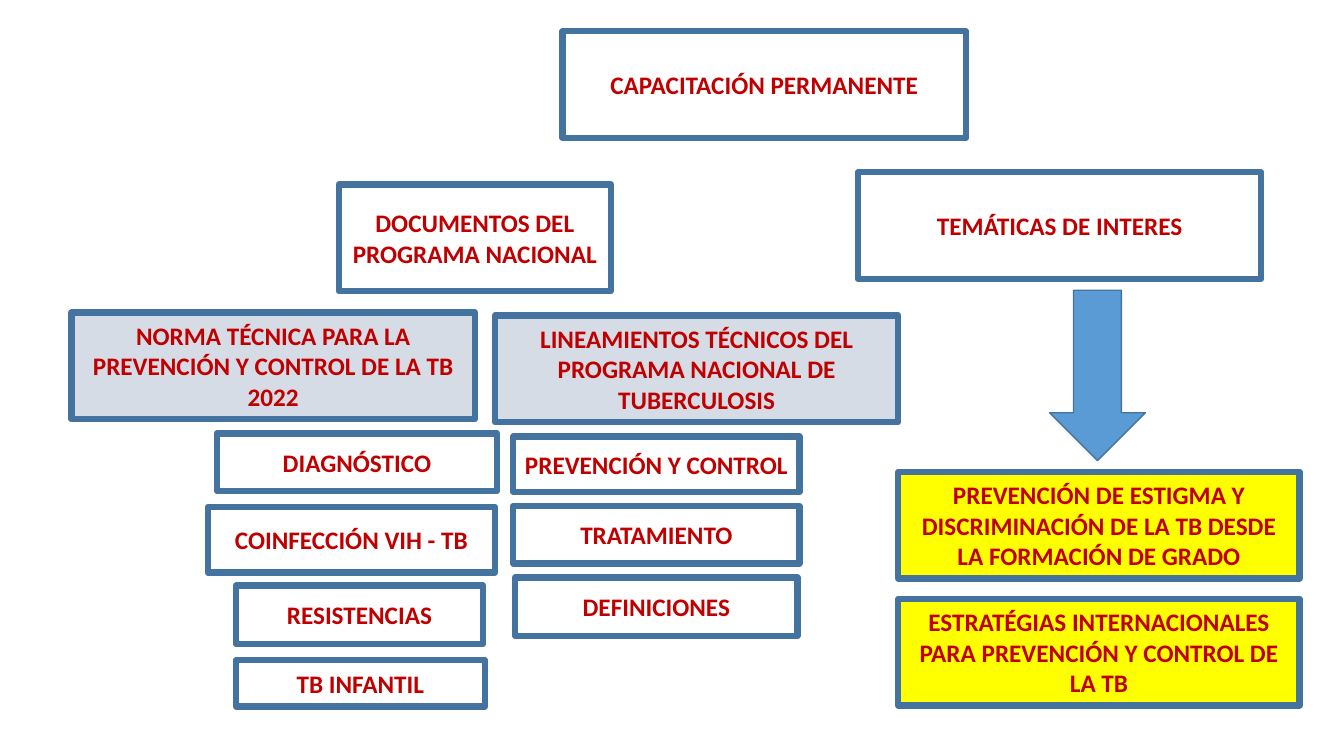
from pptx import Presentation
from pptx.dml.color import RGBColor
from pptx.enum.shapes import MSO_SHAPE
from pptx.enum.text import MSO_ANCHOR, MSO_AUTO_SIZE, PP_ALIGN
from pptx.util import Inches, Pt

BORDER = "43739E"
BLUE = "5B9BD5"
GRAY = "D6DCE5"
YELLOW = "FFFF00"
RED = "C00000"

TITLE = ("CAPACITACIÓN PERMANENTE", 5.58, 0.31, 4, 1.06)

# text, left, top, width, height, fill
BOXES = [
    ("DOCUMENTOS DEL PROGRAMA NACIONAL", 3.36, 1.83, 2.7, 1.06, None),
    ("TEMÁTICAS DE INTERES", 8.51, 1.71, 4, 1.06, None),
    ("NORMA TÉCNICA PARA LA PREVENCIÓN Y CONTROL DE LA TB 2022",
     0.71, 3.1, 4, 1.06, GRAY),
    ("DIAGNÓSTICO", 2.15, 4.3, 2.78, 0.57, None),
    ("COINFECCIÓN VIH - TB", 2.06, 5.03, 2.85, 0.65, None),
    ("RESISTENCIAS", 2.34, 5.81, 2.45, 0.58, None),
    ("TB INFANTIL", 2.34, 6.55, 2.47, 0.46, None),
    ("LINEAMIENTOS TÉCNICOS DEL PROGRAMA NACIONAL DE TUBERCULOSIS",
     4.91, 3.13, 4, 1.06, GRAY),
    ("PREVENCIÓN Y CONTROL", 5.09, 4.33, 2.84, 0.55, None),
    ("TRATAMIENTO", 5.09, 5.02, 2.84, 0.57, None),
    ("DEFINICIONES", 5.11, 5.73, 2.8, 0.58, None),
    ("PREVENCIÓN DE ESTIGMA Y DISCRIMINACIÓN DE LA TB DESDE "
     "LA FORMACIÓN DE GRADO", 8.91, 4.68, 3.98, 1.06, YELLOW),
    ("ESTRATÉGIAS INTERNACIONALES PARA PREVENCIÓN Y CONTROL DE LA TB",
     8.91, 5.94, 3.98, 1.06, YELLOW),
]


def color(value):
    return RGBColor.from_string(value)


def set_attributes(target, values):
    for name, value in values.items():
        setattr(target, name, value)


def paint(shape, fill, line_width):
    if fill:
        shape.fill.solid()
        shape.fill.fore_color.rgb = color(fill)
    else:
        shape.fill.background()
    shape.line.color.rgb = color(BORDER)
    shape.line.width = Pt(line_width)


def write_label(shape, text):
    frame = shape.text_frame
    set_attributes(frame, {"text": text, "word_wrap": True,
                           "auto_size": MSO_AUTO_SIZE.NONE,
                           "vertical_anchor": MSO_ANCHOR.MIDDLE})
    paragraph = frame.paragraphs[0]
    paragraph.alignment = PP_ALIGN.CENTER
    font = paragraph.runs[0].font
    set_attributes(font, {"name": "Calibri", "size": Pt(18), "bold": True})
    font.color.rgb = color(RED)


def add_preset(slide, preset, left, top, width, height):
    shape = slide.shapes.add_shape(preset, Inches(left), Inches(top),
                                   Inches(width), Inches(height))
    shape.shadow.inherit = False
    return shape


def add_title(slide, text, left, top, width, height):
    title = slide.shapes.title
    set_attributes(title, {"left": Inches(left), "top": Inches(top),
                           "width": Inches(width), "height": Inches(height)})
    paint(title, None, 4.5)
    write_label(title, text)


def add_box(slide, text, left, top, width, height, fill):
    box = add_preset(slide, MSO_SHAPE.RECTANGLE, left, top, width, height)
    paint(box, fill, 4.5)
    write_label(box, text)


def add_down_arrow(slide, left, top, width, height):
    arrow = add_preset(slide, MSO_SHAPE.DOWN_ARROW, left, top, width, height)
    paint(arrow, BLUE, 1)


def main():
    presentation = Presentation()
    set_attributes(presentation, {"slide_width": Inches(13.33),
                                  "slide_height": Inches(7.5)})
    title_only = presentation.slide_layouts.get_by_name("Title Only")
    slide = presentation.slides.add_slide(title_only)
    add_title(slide, *TITLE)
    for box in BOXES:
        add_box(slide, *box)
    add_down_arrow(slide, 10.41, 2.88, 0.95, 1.69)
    presentation.save("out.pptx")


if __name__ == "__main__":
    main()
